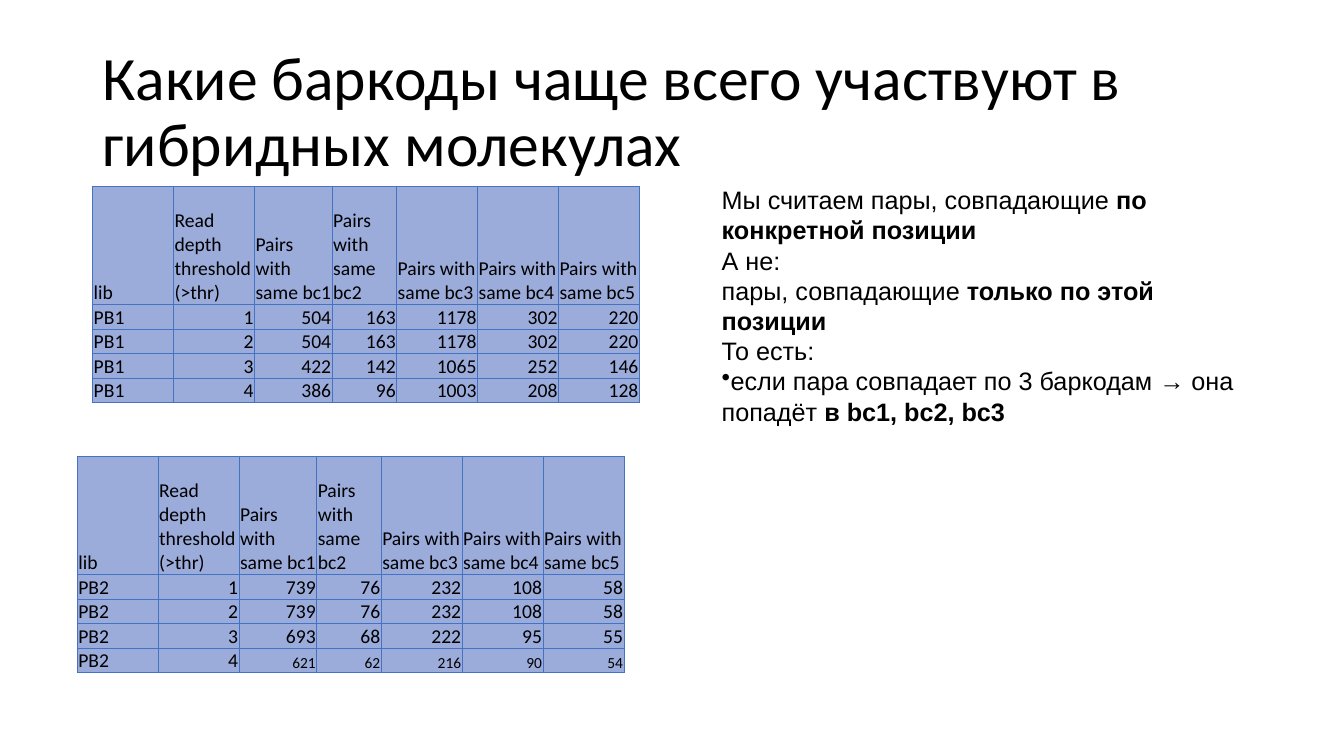
from lxml import etree
from pptx import Presentation
from pptx.dml.color import RGBColor
from pptx.enum.text import MSO_ANCHOR as ANCHOR, PP_ALIGN as ALIGN
from pptx.oxml import parse_xml
from pptx.oxml.ns import nsdecls, qn
from pptx.util import Inches, Pt

COLORS = {"text": "000000", "cell": "9BABDA", "border": "4472C4"}
W, H = Inches(13.33), Inches(7.5)


def box(x, y, w, h):
    """Turn percentages of the slide's width and height into lengths."""
    return [int(size * share / 100) for size, share in zip((W, H, W, H), (x, y, w, h))]


def add_run(p, text, size, name, bold=False):
    r = p.add_run()
    r.text = text
    for key, value in {"size": Pt(size), "name": name, "bold": bold}.items():
        setattr(r.font, key, value)
    r.font.color.rgb = RGBColor.from_string(COLORS["text"])


prs = Presentation()
prs.slide_width, prs.slide_height = W, H
s = prs.slides.add_slide(prs.slide_layouts[6])

# Title
tf = s.shapes.add_textbox(*box(6.9, 5.33, 86.25, 19.33)).text_frame
tf.word_wrap = True
tf.vertical_anchor = ANCHOR.MIDDLE
p = tf.paragraphs[0]
p.line_spacing = 0.9
add_run(p, "Какие баркоды чаще всего участвуют в гибридных молекулах", 44, "Calibri")

# Tables of pair counts, one per library
HEADER = ["lib", "Read depth threshold (>thr)"] + [f"Pairs with same bc{n}" for n in range(1, 6)]
COL_SHARES = [6.02, 6.02, 5.78, 4.8, 6.02, 6.02, 6.02]
ROW_SHARES = [15.6] + [3.2] * 4
CELL_FORMAT = {
    "margin_left": Inches(0.01), "margin_right": Inches(0.01),
    "margin_top": Inches(0.01), "margin_bottom": 0,
    "vertical_anchor": ANCHOR.BOTTOM,
}
LIBRARIES = [
    ("PB1", 6.9, 24.67, 14, [
        [504, 163, 1178, 302, 220],
        [504, 163, 1178, 302, 220],
        [422, 142, 1065, 252, 146],
        [386, 96, 1003, 208, 128],
    ]),
    ("PB2", 5.75, 60.4, 11, [
        [739, 76, 232, 108, 58],
        [739, 76, 232, 108, 58],
        [693, 68, 222, 95, 55],
        [621, 62, 216, 90, 54],
    ]),
]
for lib, x, y, last_size, counts in LIBRARIES:
    rows = [HEADER] + [[lib, thr, *pairs] for thr, pairs in enumerate(counts, 1)]
    frame = s.shapes.add_table(len(rows), len(HEADER), *box(x, y, sum(COL_SHARES), sum(ROW_SHARES)))
    table = frame.table
    table.first_row = table.horz_banding = False
    for col, share in zip(table.columns, COL_SHARES):
        col.width = int(W * share / 100)
    for row, share in zip(table.rows, ROW_SHARES):
        row.height = int(H * share / 100)
    for i, values in enumerate(rows):
        for j, value in enumerate(values):
            cell = table.cell(i, j)
            for key, setting in CELL_FORMAT.items():
                setattr(cell, key, setting)
            tcPr = cell._tc.get_or_add_tcPr()
            for side in "LRTB":
                tcPr.append(parse_xml(
                    f'<a:ln{side} {nsdecls("a")} w="{Pt(0.5)}"><a:solidFill>'
                    f'<a:srgbClr val="{COLORS["border"]}"/></a:solidFill></a:ln{side}>'))
            cell.fill.solid()
            cell.fill.fore_color.rgb = RGBColor.from_string(COLORS["cell"])
            p = cell.text_frame.paragraphs[0]
            p.alignment = ALIGN.RIGHT if i and j else ALIGN.LEFT
            is_last_count = i == len(counts) and j > 1
            add_run(p, str(value), last_size if is_last_count else 14, "Calibri")

# Explanation: each paragraph is a plain part and a bold part
NOTES = [
    ("Мы считаем пары, совпадающие ", "по конкретной позиции"),
    ("А не:", ""),
    ("пары, совпадающие ", "только по этой позиции"),
    ("То есть:", ""),
    ("если пара совпадает по 3 баркодам → она попадёт ", "в bc1, bc2, bc3"),
]
tf = s.shapes.add_textbox(*box(52.96, 23.73, 40.2, 37.73)).text_frame
tf.word_wrap = True
tf.vertical_anchor = ANCHOR.TOP
for i, (plain, strong) in enumerate(NOTES):
    p = tf.add_paragraph() if i else tf.paragraphs[0]
    if i == len(NOTES) - 1:
        etree.SubElement(p._p.get_or_add_pPr(), qn("a:buChar")).set("char", "•")
    add_run(p, plain, 18, "Arial")
    if strong:
        add_run(p, strong, 18, "Arial", bold=True)

prs.save("out.pptx")
